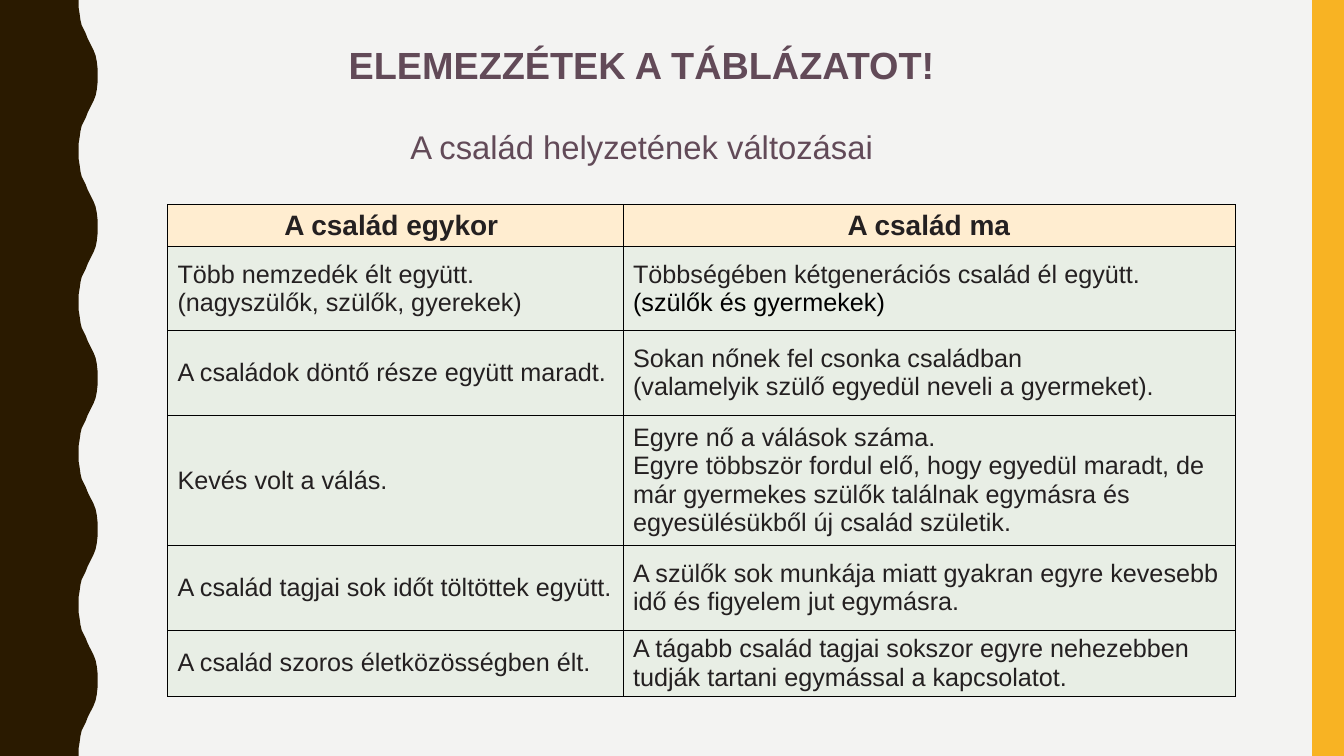
from lxml.etree import SubElement
from pptx import Presentation
from pptx.dml.color import RGBColor
from pptx.enum.shapes import MSO_SHAPE
from pptx.enum.text import MSO_ANCHOR, MSO_AUTO_SIZE, PP_ALIGN
from pptx.oxml.ns import qn
from pptx.util import Cm, Pt

PAPER = RGBColor(0xF3, 0xF3, 0xF2)
BROWN = RGBColor(0x2A, 0x1A, 0x00)
AMBER = RGBColor(0xF8, 0xB3, 0x23)
PLUM = RGBColor(0x62, 0x4A, 0x58)
INK = RGBColor(0x24, 0x20, 0x21)
BLACK = RGBColor(0, 0, 0)
CREAM = RGBColor(0xFF, 0xED, 0xD0)
SAGE = RGBColor(0xE8, 0xEE, 0xE5)

WIDTH, HEIGHT = 33.87, 19.05
HALF_WAVE = [
    (1.98, 0), (1.98, 0.18), (2.01, 0.36), (2.03, 0.51), (2.06, 0.64),
    (2.11, 0.74), (2.16, 0.84), (2.21, 0.97), (2.26, 1.07), (2.31, 1.17),
    (2.36, 1.27), (2.41, 1.4), (2.44, 1.55), (2.46, 1.73), (2.46, 1.9),
]
WAVES = 5
PERIOD = HEIGHT / WAVES

COLUMNS = [11.48, 15.42]
ROW_HEIGHTS = [0.97, 2.13, 2.13, 3.28, 2.13, 1.65]
ROWS = [
    ("A család egykor ", "A család ma"),
    ("Több nemzedék élt együtt.\n(nagyszülők, szülők, gyerekek)",
     "Többségében kétgenerációs család él együtt.\n(szülők és gyermekek)"),
    ("A családok döntő része együtt maradt.",
     "Sokan nőnek fel csonka családban\n"
     "(valamelyik szülő egyedül neveli a gyermeket)."),
    ("Kevés volt a válás.",
     "Egyre nő a válások száma.\n"
     "Egyre többször fordul elő, hogy egyedül maradt, de már gyermekes "
     "szülők találnak egymásra és egyesülésükből új család születik."),
    ("A család tagjai sok időt töltöttek együtt.",
     "A szülők sok munkája miatt gyakran egyre kevesebb\v"
     "idő és figyelem jut egymásra."),
    ("A család szoros életközösségben élt.",
     "A tágabb család tagjai sokszor egyre nehezebben\v"
     "tudják tartani egymással a kapcsolatot."),
]


class SlideBuilder:
    font = "Arial"
    header = {"size": Pt(20), "bold": True}
    body = {"size": Pt(18), "bold": False}

    def __init__(self, prs):
        self.slide = prs.slides.add_slide(prs.slide_layouts[5])
        self.shapes = self.slide.shapes

    def background(self, color):
        fill = self.slide.background.fill
        fill.solid()
        fill.fore_color.rgb = color

    def format_text(self, p, color, values):
        for r in p.runs:
            for name, value in {"name": self.font, **values}.items():
                setattr(r.font, name, value)
            r.font.color.rgb = color

    def paint(self, sp, color):
        sp.shadow.inherit = False
        sp.fill.solid()
        sp.fill.fore_color.rgb = color
        sp.line.fill.background()

    def rect(self, x, y, w, h, color):
        sp = self.shapes.add_shape(MSO_SHAPE.RECTANGLE, Cm(x), Cm(y), Cm(w), Cm(h))
        self.paint(sp, color)

    def wavy_edge(self, color):
        wave = HALF_WAVE + [(x, PERIOD - y) for x, y in reversed(HALF_WAVE[:-1])]
        edge = [(x, y + i * PERIOD) for i in range(WAVES) for x, y in wave]
        points = [(Cm(x), Cm(y)) for x, y in edge + [(0, HEIGHT)]]
        builder = self.shapes.build_freeform(0, 0)
        builder.add_line_segments(points, close=True)
        self.paint(builder.convert_to_shape(), color)

    def title(self, x, y, w, h, lines):
        sp = self.shapes.title
        sp.left, sp.top, sp.width, sp.height = Cm(x), Cm(y), Cm(w), Cm(h)
        tf = sp.text_frame
        frame = {"word_wrap": True, "auto_size": MSO_AUTO_SIZE.NONE,
                 "vertical_anchor": MSO_ANCHOR.MIDDLE, "margin_right": Cm(0.64)}
        for name, value in frame.items():
            setattr(tf, name, value)
        tf.text = "\n".join(text for text, _, _ in lines)
        for p, (_, space, values) in zip(tf.paragraphs, lines):
            p.alignment = PP_ALIGN.CENTER
            p.line_spacing = 0.9
            p.space_before = Pt(space)
            self.format_text(p, PLUM, values)

    def border(self, cell):
        tc_pr = cell._tc.get_or_add_tcPr()
        for i, side in enumerate(("lnL", "lnR", "lnT", "lnB")):
            ln = tc_pr.makeelement(qn(f"a:{side}"), {"w": str(Pt(0.5))})
            fill = SubElement(ln, qn("a:solidFill"))
            SubElement(fill, qn("a:srgbClr"), val=str(BLACK))
            tc_pr.insert(i, ln)

    def cell(self, cell, text, is_header):
        cell.vertical_anchor = MSO_ANCHOR.MIDDLE
        cell.fill.solid()
        cell.fill.fore_color.rgb = CREAM if is_header else SAGE
        cell.text_frame.text = text
        for p in cell.text_frame.paragraphs:
            p.alignment = PP_ALIGN.CENTER if is_header else PP_ALIGN.LEFT
            self.format_text(p, INK, self.header if is_header else self.body)
        self.border(cell)

    def table(self, x, y, rows):
        table = self.shapes.add_table(
            len(rows), len(COLUMNS), Cm(x), Cm(y),
            Cm(sum(COLUMNS)), Cm(sum(ROW_HEIGHTS))).table
        table.first_row = table.horz_banding = False
        for column, width in zip(table.columns, COLUMNS):
            column.width = Cm(width)
        for i, (row, height) in enumerate(zip(table.rows, ROW_HEIGHTS)):
            row.height = Cm(height)
            for cell, text in zip(row.cells, rows[i]):
                self.cell(cell, text, i == 0)
        return table


def main():
    prs = Presentation()
    prs.slide_width, prs.slide_height = Cm(WIDTH), Cm(HEIGHT)
    s = SlideBuilder(prs)
    s.background(PAPER)
    s.wavy_edge(BROWN)
    s.rect(33.07, 0, 0.8, HEIGHT, AMBER)
    s.title(3.48, 1.07, 25.76, 3.23, [
        ("ELEMEZZÉTEK A TÁBLÁZATOT!", 0, {"size": Pt(27), "bold": True}),
        ("A család helyzetének változásai", 31, {"size": Pt(23.4), "bold": False}),
    ])
    table = s.table(4.22, 5.16, ROWS)
    members_today = table.cell(1, 1).text_frame.paragraphs[1]
    s.format_text(members_today, BLACK, s.body)
    prs.save("out.pptx")


if __name__ == "__main__":
    main()
